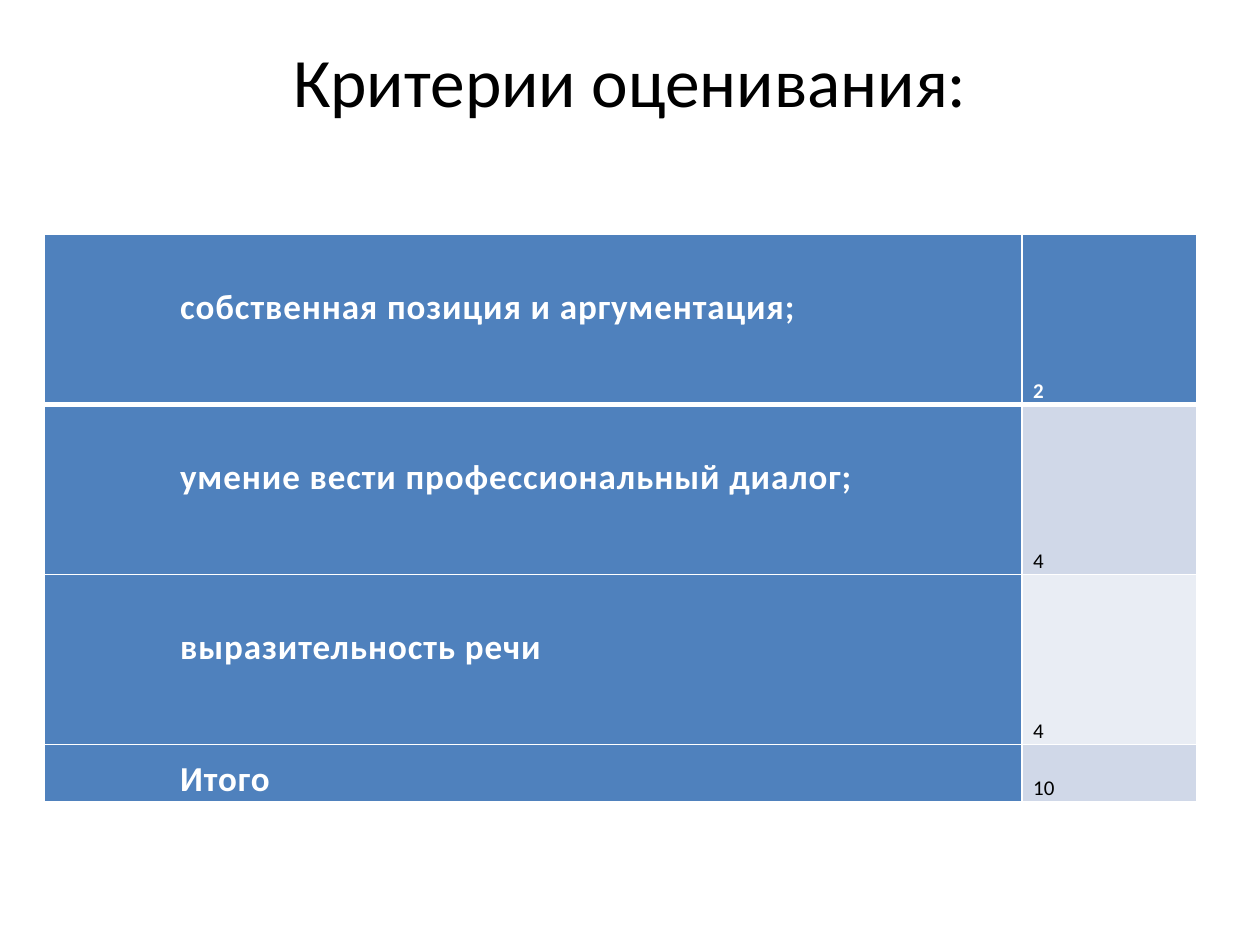
from lxml import etree
from pptx import Presentation
from pptx.dml.color import RGBColor
from pptx.enum import text
from pptx.oxml.ns import qn
from pptx.util import Inches, Pt

# Content: criterion, points
TITLE = "Критерии оценивания:"
ROWS = [
    ("собственная позиция и аргументация;", "2"),
    ("умение вести профессиональный диалог;", "4"),
    ("выразительность речи", "4"),
    ("Итого", "10"),
]
COLS = [7.76, 1.39]
TALL, SHORT = 1.35, 0.45
COLOR = {"blue": "4F81BD", "dark": "D0D8E8", "pale": "E9EDF4",
         "white": "FFFFFF", "black": "000000"}
FONT = "Calibri"


def style(para, size, color, bold=False):
    font = para.runs[0].font
    font.name, font.size, font.bold = FONT, Pt(size), bold
    font.color.rgb = RGBColor.from_string(COLOR[color])


def border(cell, low):
    """White rules on all sides; low is the width of the bottom one."""
    props = cell._tc.get_or_add_tcPr()
    sides = [("a:lnL", 1), ("a:lnR", 1), ("a:lnT", 1), ("a:lnB", low)]
    for at, (tag, width) in enumerate(sides):
        line = etree.Element(qn(tag), w=str(Pt(width)))
        fill = etree.SubElement(line, qn("a:solidFill"))
        etree.SubElement(fill, qn("a:srgbClr"), val=COLOR["white"])
        props.insert(at, line)


def indent(para, left, first):
    props = para._p.get_or_add_pPr()
    props.set("marL", str(Inches(left)))
    props.set("indent", str(Inches(first)))


def fill_cell(cell, words, fill, low, foot=0):
    cell.text_frame.text = words
    cell.vertical_anchor = text.MSO_ANCHOR.BOTTOM
    cell.margin_left = cell.margin_right = Inches(0.07)
    cell.margin_top, cell.margin_bottom = 0, Inches(foot)
    cell.fill.solid()
    cell.fill.fore_color.rgb = RGBColor.from_string(COLOR[fill])
    border(cell, low)
    return cell.text_frame.paragraphs[0]


prs = Presentation()
prs.slide_width, prs.slide_height = Inches(10), Inches(7.5)
slide = prs.slides.add_slide(prs.slide_layouts[6])

# Title
box = slide.shapes.add_textbox(Inches(0.5), Inches(0.3), Inches(9), Inches(1.25))
frame = box.text_frame
frame.word_wrap = True
frame.margin_top = 0
frame.text = TITLE
frame.paragraphs[0].alignment = text.PP_ALIGN.CENTER
style(frame.paragraphs[0], 39.6, "black")

# Table grid: the total row is short
last = len(ROWS) - 1
highs = [TALL] * last + [SHORT]
table = slide.shapes.add_table(
    len(ROWS), len(COLS), Inches(0.35), Inches(1.86),
    Inches(sum(COLS)), Inches(sum(highs))).table
table.horz_banding = False
for col, wide in zip(table.columns, COLS):
    col.width = Inches(wide)

# Rows: criterion on blue, points on alternating tints below the first row
for i, (name, points) in enumerate(ROWS):
    table.rows[i].height = Inches(highs[i])
    low = 3 if i == 0 else 1

    para = fill_cell(table.cell(i, 0), name, "blue", low, 0 if i == last else 0.6)
    indent(para, 0.49, 0.52)
    para.line_spacing = Pt(15.3)
    style(para, 20, "white", True)
    para.runs[0].font._element.set("spc", "50")

    tint = "blue" if i == 0 else ("pale", "dark")[i % 2]
    para = fill_cell(table.cell(i, 1), points, tint, low)
    indent(para, 0.02, 0)
    style(para, 12, "white" if i == 0 else "black", i == 0)

prs.save("out.pptx")
